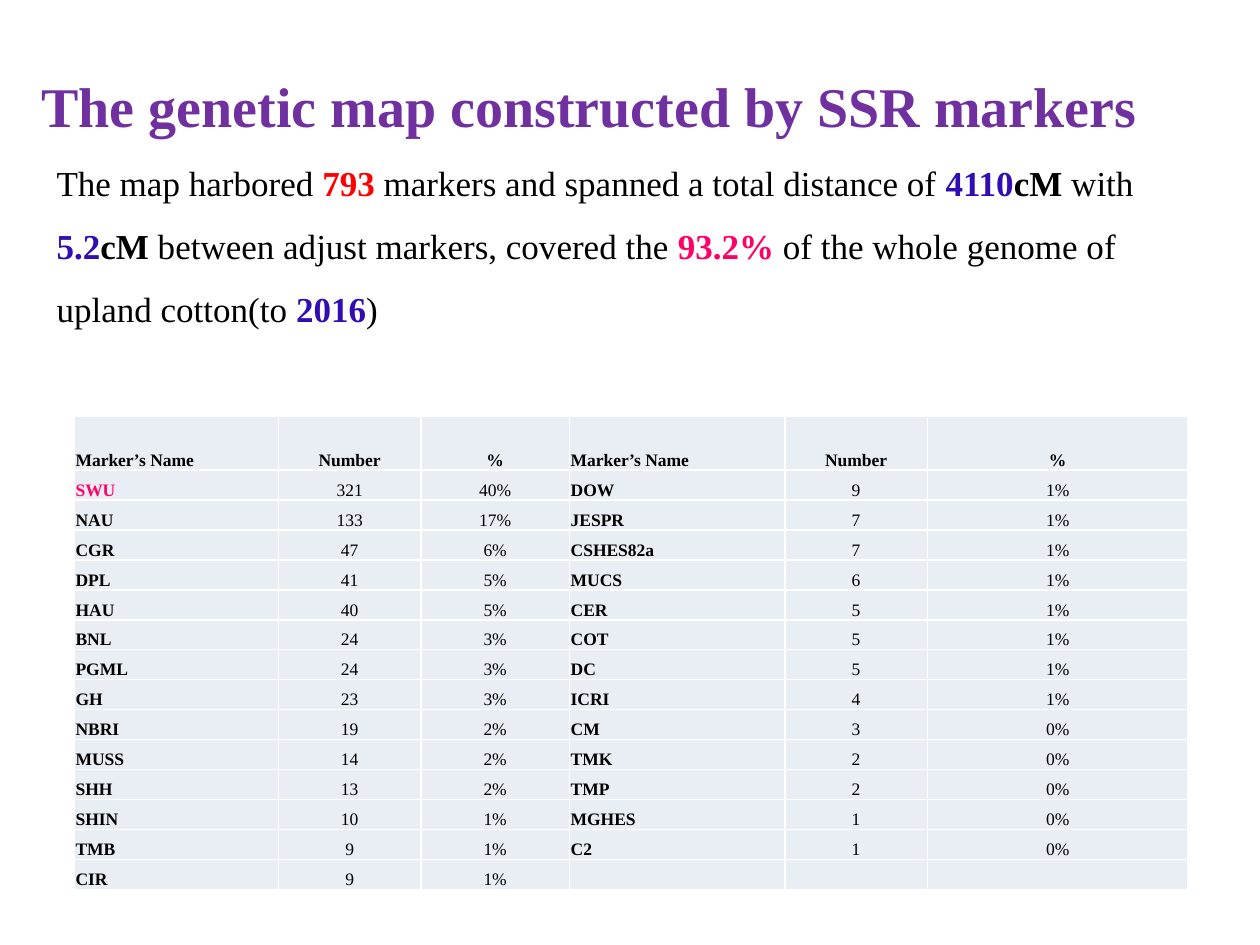
from dataclasses import dataclass
from typing import Optional

import pptx
import pptx.dml.color
import pptx.enum.text
import pptx.oxml.ns
import pptx.presentation
import pptx.slide
import pptx.table
import pptx.text.text
import pptx.util
from lxml import etree
from pptx.util import Inches

Align = pptx.enum.text.PP_ALIGN


@dataclass(frozen=True)
class Theme:
    font: str = "Times New Roman"
    title_size: int = 32
    body_size: int = 20
    table_size: int = 10
    title: str = "7030A0"
    text: str = "000000"
    red: str = "FF0000"
    blue: str = "310DB3"
    pink: str = "FF0066"
    cell: str = "E9EDF4"
    border: str = "FFFFFF"
    border_width: int = 1
    line_spacing: float = 1.5


THEME = Theme()


@dataclass(frozen=True)
class Span:
    text: str
    color: str = THEME.text
    bold: bool = False


@dataclass(frozen=True)
class Marker:
    name: str
    number: int
    color: str = THEME.text


TOTAL_MARKERS = 793

SUMMARY = [
    Span("The map harbored "),
    Span(f"{TOTAL_MARKERS} ", THEME.red, True),
    Span("markers and spanned a total distance of "),
    Span("4110", THEME.blue, True),
    Span("cM ", bold=True),
    Span("with "),
    Span("5.2", THEME.blue, True),
    Span("cM", bold=True),
    Span(" between adjust markers, covered the "),
    Span("93.2%", THEME.pink, True),
    Span(" of the whole genome of upland cotton(to "),
    Span("2016", THEME.blue, True),
    Span(")"),
]

HEADINGS = ["Marker’s Name", "Number", "%"]
LEFT_MARKERS = [
    Marker("SWU", 321, THEME.pink), Marker("NAU", 133), Marker("CGR", 47),
    Marker("DPL", 41), Marker("HAU", 40), Marker("BNL", 24), Marker("PGML", 24),
    Marker("GH", 23), Marker("NBRI", 19), Marker("MUSS", 14), Marker("SHH", 13),
    Marker("SHIN", 10), Marker("TMB", 9), Marker("CIR", 9),
]
RIGHT_MARKERS = [
    Marker("DOW", 9), Marker("JESPR", 7), Marker("CSHES82a", 7),
    Marker("MUCS", 6), Marker("CER", 5), Marker("COT", 5), Marker("DC", 5),
    Marker("ICRI", 4), Marker("CM", 3), Marker("TMK", 2), Marker("TMP", 2),
    Marker("MGHES", 1), Marker("C2", 1),
]
COLUMN_WIDTHS = [1.62, 1.13, 1.18, 1.71, 1.13, 2.07]
TABLE_HEIGHT = 3.76
HEADER_HEIGHT = 0.43


def rgb(color: str) -> pptx.dml.color.RGBColor:
    return pptx.dml.color.RGBColor.from_string(color)


def add_text(paragraph: pptx.text.text._Paragraph, text: str, *, size: int,
             color: str = THEME.text, bold: bool = False) -> None:
    run = paragraph.add_run()
    run.text = text
    run.font.name = THEME.font
    run.font.size = pptx.util.Pt(size)
    run.font.bold = bold
    run.font.color.rgb = rgb(color)


def add_text_box(slide: pptx.slide.Slide, left: float, top: float, width: float,
                 height: float, spans: list[Span], size: int, grow: bool = False) -> None:
    frame = slide.shapes.add_textbox(
        Inches(left), Inches(top), Inches(width), Inches(height)).text_frame
    frame.word_wrap = True
    if grow:
        frame.auto_size = pptx.enum.text.MSO_AUTO_SIZE.SHAPE_TO_FIT_TEXT
    paragraph = frame.paragraphs[0]
    paragraph.line_spacing = THEME.line_spacing
    for span in spans:
        add_text(paragraph, span.text, size=size, color=span.color, bold=span.bold)


def add_borders(cell: pptx.table._Cell) -> None:
    properties = cell._tc.get_or_add_tcPr()
    qn = pptx.oxml.ns.qn
    for side in ("a:lnL", "a:lnR", "a:lnT", "a:lnB"):
        line = etree.SubElement(properties, qn(side),
                                w=str(pptx.util.Pt(THEME.border_width)))
        fill = etree.SubElement(line, qn("a:solidFill"))
        etree.SubElement(fill, qn("a:srgbClr"), val=THEME.border)


def fill_cell(cell: pptx.table._Cell, span: Optional[Span], align: Align) -> None:
    """Style a cell and write its span; without one, keep the empty line small."""
    add_borders(cell)
    cell.fill.solid()
    cell.fill.fore_color.rgb = rgb(THEME.cell)
    cell.vertical_anchor = pptx.enum.text.MSO_ANCHOR.BOTTOM
    cell.margin_left = cell.margin_right = cell.margin_top = Inches(0.01)
    cell.margin_bottom = Inches(0)
    paragraph = cell.text_frame.paragraphs[0]
    paragraph.alignment = align
    if span:
        add_text(paragraph, span.text, size=THEME.table_size,
                 color=span.color, bold=span.bold)
    else:
        etree.SubElement(paragraph._p, pptx.oxml.ns.qn("a:endParaRPr"),
                         sz=str(THEME.table_size * 100))


def marker_spans(markers: list[Marker], index: int) -> list[Optional[Span]]:
    if index >= len(markers):
        return [None] * len(HEADINGS)
    marker = markers[index]
    return [Span(marker.name, marker.color, True), Span(str(marker.number)),
            Span(f"{marker.number / TOTAL_MARKERS:.0%}")]


def add_marker_table(slide: pptx.slide.Slide, left: float, top: float) -> None:
    rows = [[Span(heading, bold=True) for heading in HEADINGS * 2]]
    rows += [marker_spans(LEFT_MARKERS, index) + marker_spans(RIGHT_MARKERS, index)
             for index in range(len(LEFT_MARKERS))]
    table = slide.shapes.add_table(
        len(rows), len(COLUMN_WIDTHS), Inches(left), Inches(top),
        Inches(sum(COLUMN_WIDTHS)), Inches(TABLE_HEIGHT)).table
    table.first_row = table.horz_banding = False
    for column, width in zip(table.columns, COLUMN_WIDTHS):
        column.width = Inches(width)
    marker_height = (TABLE_HEIGHT - HEADER_HEIGHT) / len(LEFT_MARKERS)
    for row_index, spans in enumerate(rows):
        table.rows[row_index].height = Inches(
            marker_height if row_index else HEADER_HEIGHT)
        for column_index, span in enumerate(spans):
            is_name = column_index % len(HEADINGS) == 0
            fill_cell(table.cell(row_index, column_index), span,
                      Align.LEFT if is_name else Align.CENTER)


def main() -> None:
    presentation = pptx.Presentation()
    presentation.slide_width = Inches(10)
    presentation.slide_height = Inches(7.5)
    slide = presentation.slides.add_slide(presentation.slide_layouts[6])
    title = Span("The genetic map constructed by SSR markers", THEME.title, True)
    add_text_box(slide, 0.23, 0.25, 9.52, 0.81, [title], THEME.title_size, grow=True)
    add_text_box(slide, 0.35, 1.07, 8.92, 1.67, SUMMARY, THEME.body_size)
    add_marker_table(slide, 0.59, 3.3)
    presentation.save("out.pptx")


if __name__ == "__main__":
    main()
